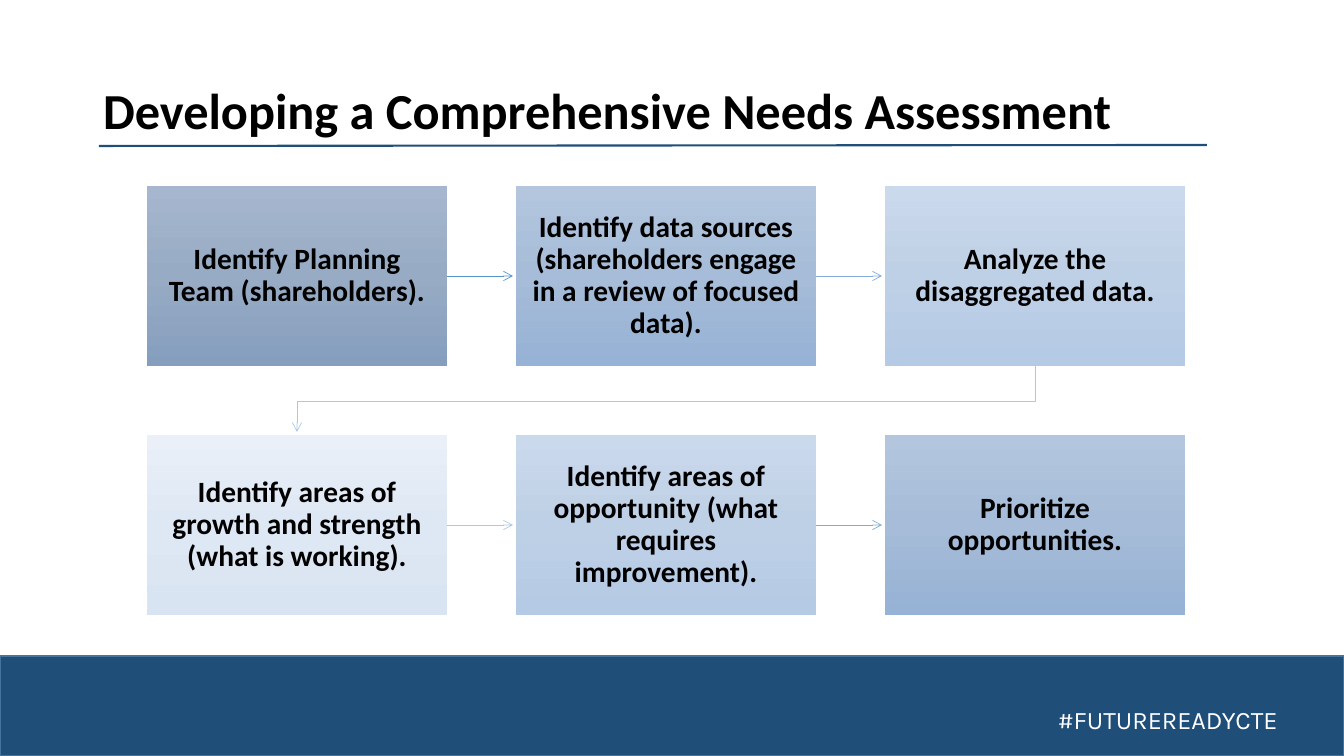
from copy import deepcopy

from lxml.etree import SubElement
from pptx import Presentation
from pptx.dml.color import RGBColor
from pptx.enum.shapes import MSO_CONNECTOR, MSO_SHAPE
from pptx.enum.text import MSO_ANCHOR, MSO_AUTO_SIZE, PP_ALIGN
from pptx.oxml.ns import qn
from pptx.util import Pt

PX = 914400 / 100.8

BLACK = RGBColor(0x00, 0x00, 0x00)
WHITE = RGBColor(0xFF, 0xFF, 0xFF)
NAVY = RGBColor(0x1F, 0x4E, 0x79)
FOOTER_EDGE = RGBColor(0x43, 0x73, 0x9E)

# Card gradients, top to bottom
SLATE = [RGBColor(0xA5, 0xB6, 0xCE), RGBColor(0x98, 0xAB, 0xC4), RGBColor(0x86, 0x9E, 0xBE)]
STEEL = [RGBColor(0xB3, 0xC6, 0xDE), RGBColor(0xA6, 0xBC, 0xD8), RGBColor(0x96, 0xB2, 0xD5)]
SKY = [RGBColor(0xCB, 0xD9, 0xEC), RGBColor(0xBE, 0xD0, 0xE6), RGBColor(0xB4, 0xCA, 0xE5)]
ICE = [RGBColor(0xEB, 0xF0, 0xF8), RGBColor(0xDE, 0xE7, 0xF4), RGBColor(0xD9, 0xE4, 0xF3)]

ARROW_STRONG = RGBColor(0x57, 0x94, 0xCB)
ARROW_MEDIUM = RGBColor(0x83, 0xAC, 0xD8)
ARROW_PALE = RGBColor(0xAF, 0xC7, 0xE5)

# Text, gradient and colour of the arrow to the next step
STEPS = [
    ("Identify Planning Team (shareholders).", SLATE, ARROW_STRONG),
    ("Identify data sources (shareholders engage in a review of focused data).",
     STEEL, ARROW_MEDIUM),
    ("Analyze the disaggregated data.", SKY, ARROW_PALE),
    ("Identify areas of growth and strength (what is working).", ICE, ARROW_PALE),
    ("Identify areas of opportunity (what requires improvement).", SKY, ARROW_MEDIUM),
    ("Prioritize opportunities.", STEEL, None),
]
COLUMNS = 3
CARD_LEFT, CARD_TOP = 147, 186
CARD_WIDTH, CARD_HEIGHT = 300, 180
COLUMN_STEP, ROW_STEP = 369, 249
ARROW_LENGTH = 66


def px(*lengths):
    """Turn pixel lengths into EMU."""
    return [round(length * PX) for length in lengths]


def style_line(shape, color, width, arrow=False):
    shape.line.color.rgb = color
    shape.line.width = Pt(width)
    if arrow:
        SubElement(shape.line._get_or_add_ln(), qn("a:tailEnd"), type="arrow")
    properties = shape._element.spPr
    if properties.find(qn("a:effectLst")) is None:
        SubElement(properties, qn("a:effectLst"))


presentation = Presentation()
presentation.slide_width, presentation.slide_height = px(1344, 756)
slide = presentation.slides.add_slide(presentation.slide_layouts[5])
shapes = slide.shapes

# Footer band
footer = shapes.add_shape(MSO_SHAPE.RECTANGLE, *px(0, 656, 1344, 100))
footer.fill.solid()
footer.fill.fore_color.rgb = NAVY
style_line(footer, FOOTER_EDGE, 1)

hashtag = shapes.add_textbox(*px(1048, 699, 241, 40))
hashtag.text_frame.word_wrap = False
hashtag.text_frame.auto_size = MSO_AUTO_SIZE.SHAPE_TO_FIT_TEXT
paragraph = hashtag.text_frame.paragraphs[0]
paragraph.text = "#FUTUREREADYCTE"
paragraph.font.name = "Karla"
paragraph.font.size = Pt(18)
paragraph.font.color.rgb = WHITE

# Title and its rule
title = shapes.title
title.left, title.top, title.width, title.height = px(93, 40, 1159, 146)
title.text_frame.auto_size = MSO_AUTO_SIZE.NONE
title.text_frame.vertical_anchor = MSO_ANCHOR.MIDDLE
paragraph = title.text_frame.paragraphs[0]
paragraph.text = "Developing a Comprehensive Needs Assessment"
paragraph.alignment = PP_ALIGN.LEFT
paragraph.line_spacing = 0.9
paragraph.font.name = "Calibri"
paragraph.font.size = Pt(36)
paragraph.font.bold = True
paragraph.font.color.rgb = BLACK

rule = shapes.add_connector(MSO_CONNECTOR.STRAIGHT, *px(99, 146, 1207, 145))
style_line(rule, NAVY, 1.5)

# Step cards and the arrows between them
for index, (text, gradient, arrow_color) in enumerate(STEPS):
    row, column = divmod(index, COLUMNS)
    left = CARD_LEFT + column * COLUMN_STEP
    top = CARD_TOP + row * ROW_STEP
    right, bottom = left + CARD_WIDTH, top + CARD_HEIGHT

    card = shapes.add_shape(MSO_SHAPE.RECTANGLE, *px(left, top, CARD_WIDTH, CARD_HEIGHT))
    card.shadow.inherit = False
    card.line.fill.background()
    card.fill.gradient()
    card.fill.gradient_angle = 270
    stop_list = card._element.spPr.find(".//" + qn("a:gsLst"))
    stop_list.insert(1, deepcopy(stop_list[0]))
    for stop, position, color in zip(card.fill.gradient_stops, (0, 0.5, 1), gradient):
        stop.position = position
        stop.color.rgb = color

    frame = card.text_frame
    frame.word_wrap = True
    frame.vertical_anchor = MSO_ANCHOR.MIDDLE
    frame.margin_left, frame.margin_top, frame.margin_right, frame.margin_bottom = px(16, 16, 16, 16)
    paragraph = frame.paragraphs[0]
    paragraph.text = text
    paragraph.alignment = PP_ALIGN.CENTER
    paragraph.line_spacing = 0.9
    paragraph.space_after = Pt(7.35)
    paragraph.font.name = "Calibri"
    paragraph.font.size = Pt(21)
    paragraph.font.bold = True
    paragraph.font.color.rgb = BLACK

    if arrow_color is None:
        continue
    if column < COLUMNS - 1:
        middle = top + CARD_HEIGHT // 2
        arrow = shapes.add_connector(
            MSO_CONNECTOR.STRAIGHT, *px(right, middle, right + ARROW_LENGTH, middle))
        arrow.begin_connect(card, 3)
    else:
        start = left + CARD_WIDTH // 2
        end = CARD_LEFT + CARD_WIDTH // 2
        builder = shapes.build_freeform(start, bottom, scale=PX)
        builder.add_line_segments(
            [(start, bottom + 35), (end, bottom + 35), (end, bottom + ARROW_LENGTH)], close=False)
        arrow = builder.convert_to_shape()
        arrow.fill.background()
    style_line(arrow, arrow_color, 0.5, arrow=True)

presentation.save("out.pptx")
